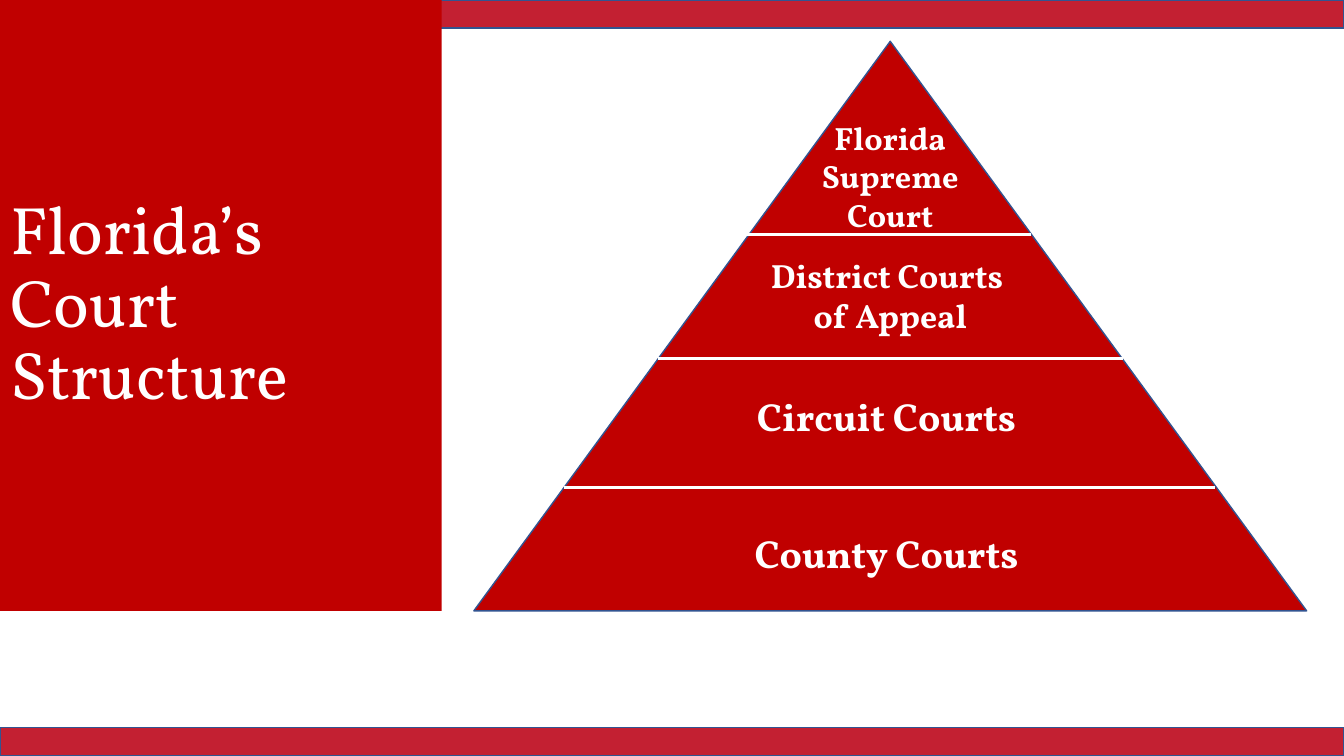
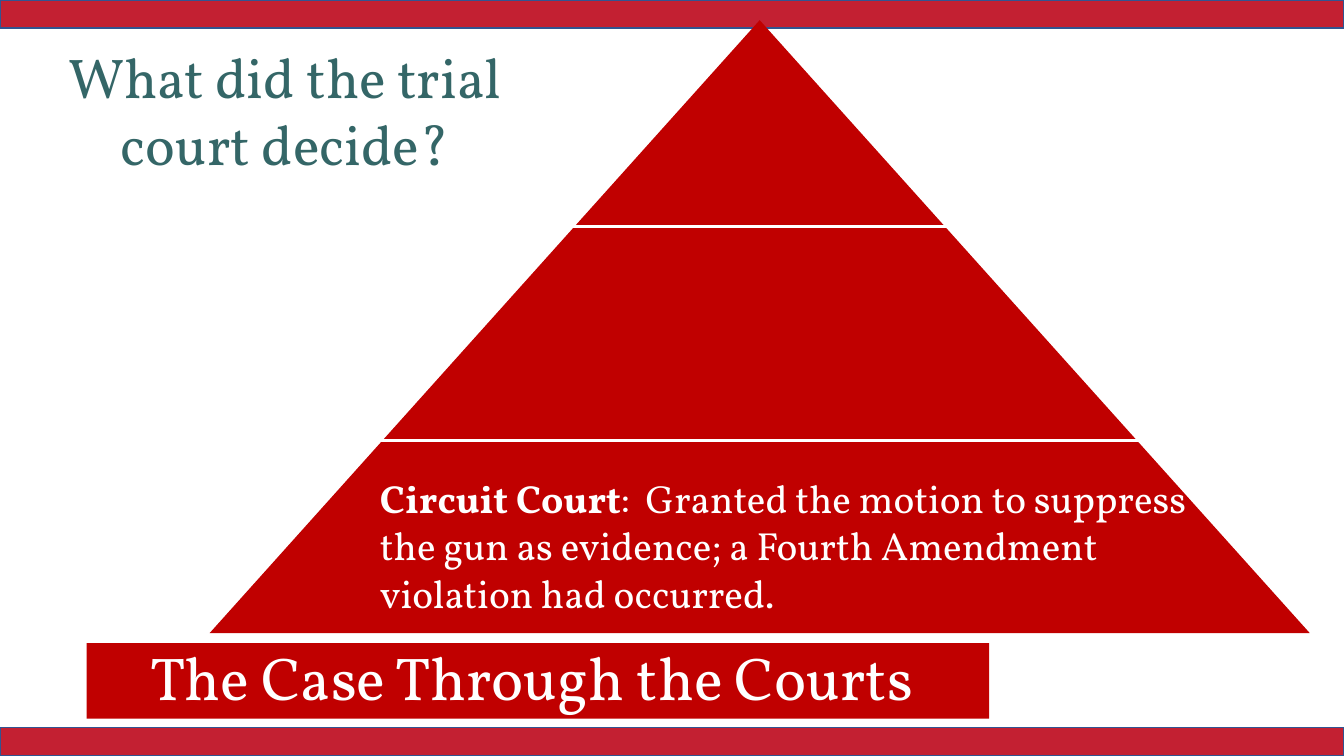
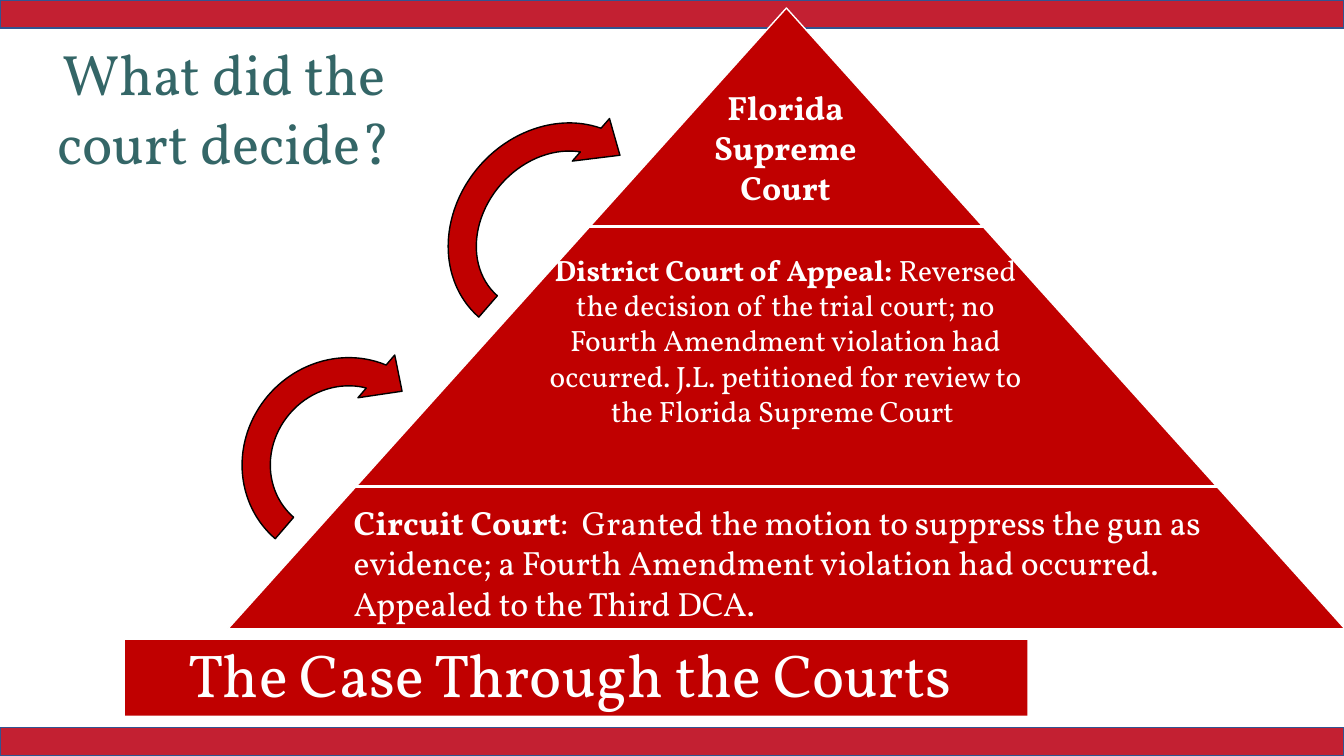
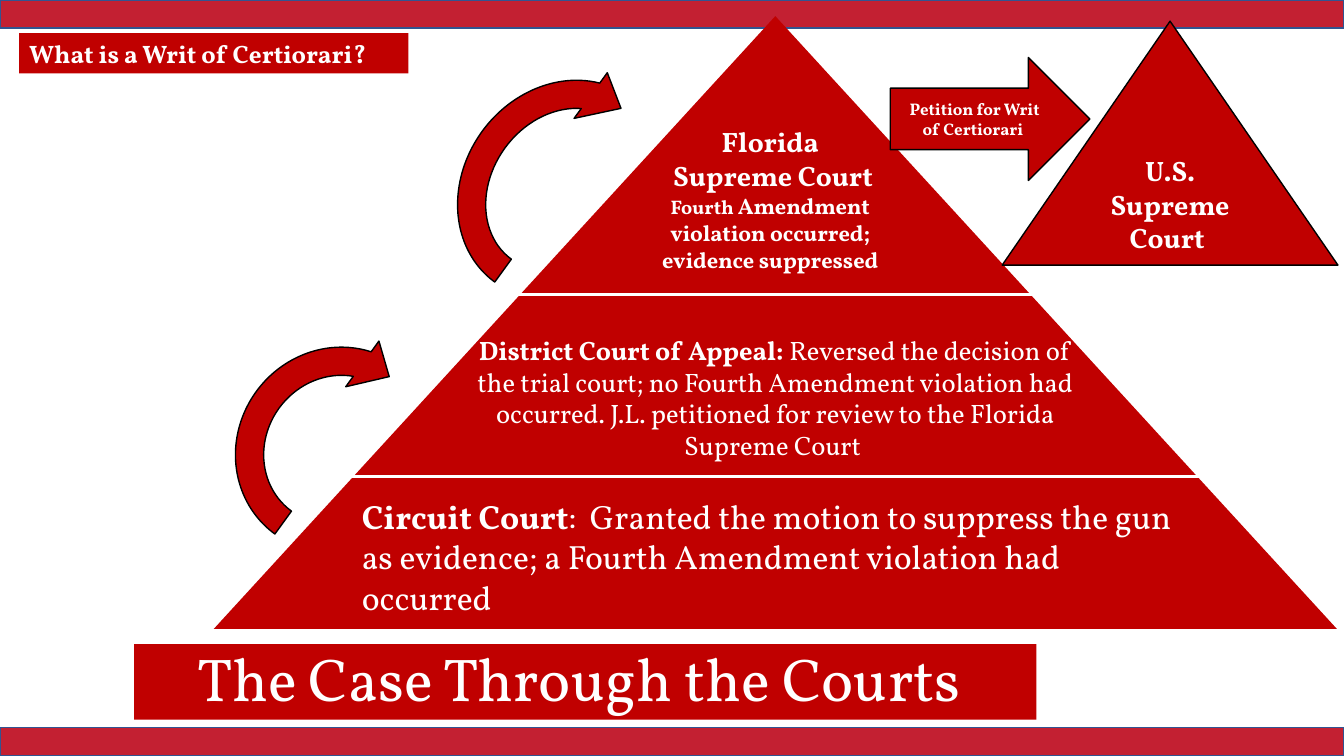
from lxml.etree import SubElement
from pptx import Presentation
from pptx.dml.color import RGBColor
from pptx.enum.shapes import MSO_CONNECTOR as Link, MSO_SHAPE as Form
from pptx.enum.text import MSO_ANCHOR as Anchor, MSO_AUTO_SIZE as Fit, PP_ALIGN as Align
from pptx.oxml.ns import qn
from pptx.util import Inches, Pt

RED, BAND, EDGE = "C00000", "C32032", "325491"
WHITE, BLACK, TEAL = "FFFFFF", "000000", "346667"
WIDTH, HEIGHT, BAND_HEIGHT = 13.33, 7.5, 0.28
CASE_TITLE = "The Case Through the Courts "
SUPPRESSED = ":  Granted the motion to suppress the gun as evidence; a Fourth Amendment violation had occurred"
APPEAL = [[("District Court of Appeal: ", {}),
           ("Reversed the decision of the trial court; no Fourth Amendment violation had occurred. "
            "J.L. petitioned for review to the Florida Supreme Court ", {"bold": False})]]


def colour(value):
    """Turn a hex string into a colour."""
    return RGBColor.from_string(value)


def circuit(ending):
    """Give the circuit court paragraph with its own ending."""
    return [[("Circuit Court", {}), (SUPPRESSED + ending, {"bold": False})]]


class CourtDeck:
    """Hold the shared style and the current page."""

    def __init__(self):
        """Set the page size and choose the layout."""
        self.deck = Presentation()
        self.deck.slide_width, self.deck.slide_height = Inches(WIDTH), Inches(HEIGHT)
        self.layout = self.deck.slide_layouts[5]
        self.page = None

    def add_bands(self):
        """Draw both bands and move them to the layout behind every page."""
        for top in (0, HEIGHT - BAND_HEIGHT):
            band = self.shape(Form.RECTANGLE, (0, top, WIDTH, BAND_HEIGHT), BAND, EDGE)
            self.layout.shapes._spTree.append(band._element)

    def add_page(self, title, at, size=43.2, align=Align.CENTER):
        """Start a page with a red title block."""
        self.page = self.deck.slides.add_slide(self.layout)
        box = self.page.shapes.title
        box.left, box.top, box.width, box.height = map(Inches, at)
        self.paint(box, RED)
        self.set_text(box, title, size, align, Anchor.MIDDLE, bold=False, spacing=0.9)

    def paint(self, box, fill, line=None):
        """Set the fill and outline of a box."""
        box.fill.solid()
        box.fill.fore_color.rgb = colour(fill)
        if line:
            box.line.color.rgb = colour(line)
            box.line.width = Pt(1)
        else:
            box.line.fill.background()

    def shape(self, form, at, fill=RED, line=None, rotation=0, parent=None):
        """Add a flat preset shape to the page or to a group."""
        box = (parent or self.page).shapes.add_shape(form, *map(Inches, at))
        box.shadow.inherit = False
        box.rotation = rotation
        self.paint(box, fill, line)
        return box

    def set_text(self, box, paras, size, align=Align.CENTER, anchor=Anchor.TOP,
                 fit=Fit.NONE, bold=True, ink=WHITE, spacing=None):
        """Fill a box with text or with paragraphs of formatted spans."""
        frame = box.text_frame
        for name, value in {"word_wrap": True, "auto_size": fit, "vertical_anchor": anchor}.items():
            setattr(frame, name, value)
        if isinstance(paras, str):
            paras = [[(paras, {})]]
        for index, spans in enumerate(paras):
            para = frame.add_paragraph() if index else frame.paragraphs[0]
            para.alignment, para.line_spacing = align, spacing
            for text, changes in spans:
                span = para.add_run()
                span.text = text
                style = {"name": "Vollkorn", "size": Pt(size), "bold": bold, **changes}
                for name, value in style.items():
                    setattr(span.font, name, value)
                span.font.color.rgb = colour(ink)

    def text(self, at, paras, size, align=Align.CENTER):
        """Add a bold white label that grows with its text."""
        box = self.page.shapes.add_textbox(*map(Inches, at))
        self.set_text(box, paras, size, align, fit=Fit.SHAPE_TO_FIT_TEXT)

    def question(self, at, text, size):
        """Add a teal question."""
        box = self.page.shapes.add_textbox(*map(Inches, at))
        self.set_text(box, text, size, anchor=Anchor.MIDDLE, bold=False, ink=TEAL)

    def pyramid(self, at, dividers, line=None):
        """Group a triangle with dividers given as left, right and height."""
        group = self.page.shapes.add_group_shape()
        self.shape(Form.ISOSCELES_TRIANGLE, at, line=line, parent=group)
        for left, right, level in dividers:
            rule = group.shapes.add_connector(Link.STRAIGHT, *map(Inches, (left, level, right, level)))
            rule.line.color.rgb = colour(WHITE)
            rule.line.width = Pt(2.25)
            SubElement(rule._element.spPr, qn("a:effectLst"))

    def curved_arrow(self, at, rotation):
        """Add a curved arrow leading up to the next court."""
        self.shape(Form.CIRCULAR_ARROW, at, line=BLACK, rotation=rotation)


def main():
    """Build the four pages and save them."""
    court = CourtDeck()

    court.add_page("Florida’s Court Structure", (0, 0, 4.38, 6.06), 48, Align.LEFT)
    court.add_bands()
    court.pyramid((4.7, 0.41, 8.26, 5.65),
                  [(5.59, 12.05, 4.84), (6.53, 11.14, 3.56), (7.41, 10.23, 2.33)], EDGE)
    court.text((6.77, 5.2, 4.12, 0.57), "County Courts ", 28)
    court.text((6.77, 3.84, 4.12, 0.57), "Circuit Courts ", 28)
    court.text((6.77, 2.48, 4.12, 0.91), [[("District Courts ", {})], [("of Appeal", {})]], 24)
    court.text((7.62, 1.12, 2.42, 1.26), "Florida Supreme Court", 23)

    court.add_page(CASE_TITLE, (0.86, 6.38, 8.95, 0.75))
    court.pyramid((2.08, 0.2, 10.91, 6.08), [(3.56, 11.37, 4.37), (5.04, 9.88, 2.25)])
    court.text((3.67, 4.66, 8.42, 1.51), circuit("."), 28, Align.LEFT)
    court.question((0.28, 0.32, 5.1, 1.54), "What did the trial court decide?", 40)

    court.add_page(CASE_TITLE, (1.24, 6.35, 8.95, 0.75))
    court.pyramid((2.26, 0.08, 11.08, 6.16), [(3.26, 12.08, 4.83), (5.17, 9.77, 2.25)], WHITE)
    court.text((3.41, 4.93, 8.94, 1.31), circuit(". Appealed to the Third DCA."), 24, Align.LEFT)
    court.text((5.18, 2.45, 5.22, 1.87), APPEAL, 21)
    court.text((6.83, 0.81, 1.92, 1.31), "Florida Supreme Court", 24)
    court.curved_arrow((2.23, 3.44, 2.35, 2.24), 310.7)
    court.curved_arrow((4.22, 1.17, 2.55, 2.24), 311.1)
    court.question((0, 0.44, 4.45, 1.25), "What did the court decide?", 40.7)

    court.add_page(CASE_TITLE, (1.33, 6.39, 8.95, 0.75))
    court.pyramid((2.12, 0.16, 11.14, 6.08), [(3.33, 12.41, 4.73), (5.14, 10.28, 2.92)])
    court.text((3.49, 4.87, 8.47, 1.31), circuit(""), 24, Align.LEFT)
    court.text((6.17, 1.19, 2.94, 1.58),
               [[("Florida", {})], [(" Supreme Court", {})],
                [("Fourth ", {"size": Pt(14)}),
                 ("Amendment violation occurred; evidence suppressed", {"size": Pt(16)})]], 20)
    court.curved_arrow((2.16, 3.34, 2.35, 2.24), 306)
    court.curved_arrow((4.3, 0.76, 2.55, 2.24), 306)
    petition = court.shape(Form.RIGHT_ARROW, (8.83, 0.57, 1.98, 1.22), line=BLACK)
    court.set_text(petition, "Petition for Writ of Certiorari ", 12, anchor=Anchor.MIDDLE)
    supreme = court.shape(Form.ISOSCELES_TRIANGLE, (9.94, 0.21, 3.33, 2.42), line=BLACK)
    court.set_text(supreme, "U.S. Supreme Court ", 20, anchor=Anchor.MIDDLE)
    court.text((4.61, 3.26, 6.16, 1.38), APPEAL, 19)
    writ = court.shape(Form.RECTANGLE, (0.19, 0.33, 3.86, 0.4))
    court.set_text(writ, "What is a Writ of Certiorari?", 18, Align.LEFT, fit=Fit.SHAPE_TO_FIT_TEXT)

    court.deck.save("out.pptx")


if __name__ == "__main__":
    main()
